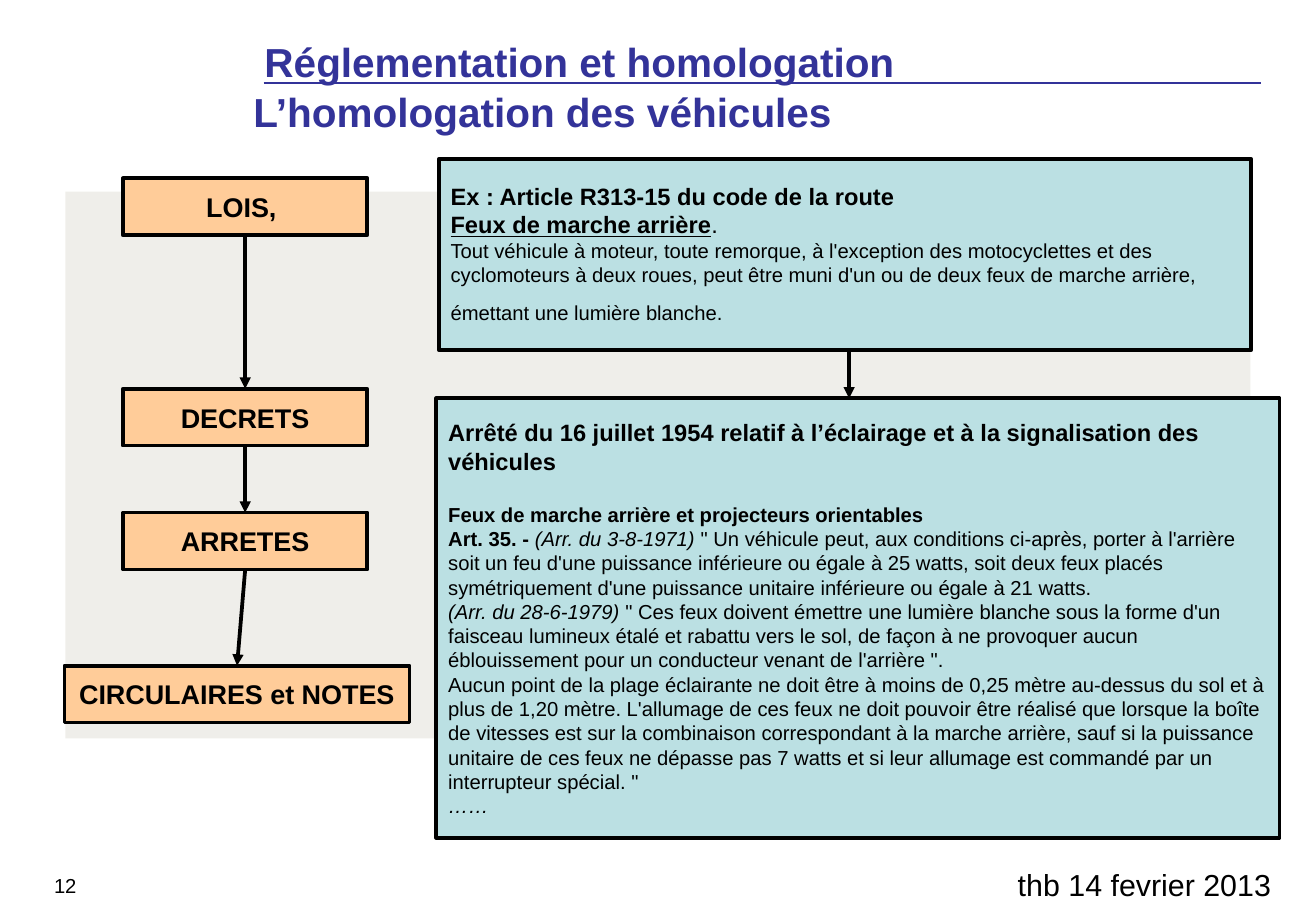
import pptx
import pptx.util
import pptx.dml.color
import pptx.enum.shapes
import pptx.enum.text
import pptx.oxml.ns
from lxml import etree

Cm, Pt = pptx.util.Cm, pptx.util.Pt
qn = pptx.oxml.ns.qn
color = pptx.dml.color.RGBColor.from_string
ALIGN = pptx.enum.text.PP_ALIGN
STRAIGHT = pptx.enum.shapes.MSO_CONNECTOR.STRAIGHT
RECTANGLE = pptx.enum.shapes.MSO_SHAPE.RECTANGLE

presentation = pptx.Presentation()
presentation.slide_width, presentation.slide_height = Cm(27.51), Cm(19.05)
slide = presentation.slides.add_slide(presentation.slide_layouts[6])


def add_line(x1, y1, x2, y2, line_color, width, arrow=False):
    line = slide.shapes.add_connector(STRAIGHT, Cm(x1), Cm(y1), Cm(x2), Cm(y2))
    line.line.color.rgb = color(line_color)
    line.line.width = Pt(width)
    if arrow:
        etree.SubElement(line.line._get_or_add_ln(), qn("a:tailEnd"), type="triangle")
    etree.SubElement(line._element.spPr, qn("a:effectLst"))


def add_box(left, top, width, height, fill, outline=True):
    box = slide.shapes.add_shape(RECTANGLE, Cm(left), Cm(top), Cm(width), Cm(height))
    box.shadow.inherit = False
    box.fill.solid()
    box.fill.fore_color.rgb = color(fill)
    if outline:
        box.line.color.rgb = color("000000")
        box.line.width = Pt(2.25)
    else:
        box.line.fill.background()
    box.text_frame.vertical_anchor = pptx.enum.text.MSO_ANCHOR.MIDDLE
    return box


# Background panel, half transparent
panel = add_box(1.37, 4.01, 24.77, 11.43, "E1DED7", outline=False)
panel_color = panel._element.spPr.find(qn("a:solidFill"))[0]
etree.SubElement(panel_color, qn("a:alpha"), val="50000")

# Titles with rule, footer and slide number
add_line(5.51, 1.73, 26.37, 1.73, "333399", 1)
labels = [
    ("Réglementation et homologation", 5.28, 0.64, 21.26, 1.27, 24, "333399", ALIGN.LEFT),
    ("L’homologation des véhicules", 5.05, 1.7, 16.69, 1.27, 24, "333399", ALIGN.LEFT),
    ("thb 14 fevrier 2013", 9.4, 17.98, 17.42, 0.46, 18, "000000", ALIGN.RIGHT),
    ("12", 0.15, 18.14, 1.7, 0.53, 12, "000000", ALIGN.RIGHT),
]
for text, left, top, width, height, size, text_color, alignment in labels:
    label = slide.shapes.add_textbox(Cm(left), Cm(top), Cm(width), Cm(height))
    label.text_frame.word_wrap = True
    paragraph = label.text_frame.paragraphs[0]
    paragraph.text = text
    paragraph.alignment = alignment
    paragraph.font.name = "Arial"
    paragraph.font.size = Pt(size)
    paragraph.font.bold = size == 24
    paragraph.font.color.rgb = color(text_color)

# Hierarchy of texts, each level pointing to the next
LEVEL_HEIGHT = 1.19
levels = [
    ("LOIS, ", 2.57, 3.73, 5.11),
    ("DECRETS", 2.57, 8.13, 5.11),
    ("ARRETES", 2.57, 10.72, 5.11),
    ("CIRCULAIRES et NOTES", 1.35, 13.92, 7.21),
]
for text, left, top, width in levels:
    box = add_box(left, top, width, LEVEL_HEIGHT, "FFCC99")
    box.text_frame.word_wrap = False
    paragraph = box.text_frame.paragraphs[0]
    paragraph.text = text
    paragraph.alignment = ALIGN.CENTER
    paragraph.font.name = "Arial"
    paragraph.font.size = Pt(16)
    paragraph.font.bold = True
    paragraph.font.color.rgb = color("000000")
for (_, left, top, width), (_, next_left, next_top, next_width) in zip(levels, levels[1:]):
    add_line(left + width / 2, top + LEVEL_HEIGHT, next_left + next_width / 2, next_top,
             "000000", 2.25, arrow=True)

# Example texts: paragraphs as (size, space before, runs), runs as (text, style)
# Styles: b bold, i italic, u underlined
code_article = [
    (14, 0, [("Ex : Article R313-15 du code de la route", "b")]),
    (14, 0, [("Feux de marche arrière", "bu"), (".", "")]),
    (12, 0, [("Tout véhicule à moteur, toute remorque, à l'exception des motocyclettes et des "
              "cyclomoteurs à deux roues, peut être muni d'un ou de deux feux de marche arrière, "
              "émettant une lumière blanche.", ""), (" ", "")]),
]
decree = [
    (14, 0, [("Arrêté du 16 juillet 1954 relatif à l’éclairage et à la signalisation des "
              "véhicules", "b")]),
    (12, 16, [("Feux de marche arrière et projecteurs orientables", "b")]),
    (12, 0, [("Art. 35. - ", "b"), ("(Arr. du 3-8-1971) ", "i"),
             ("\" Un véhicule peut, aux conditions ci-après, porter à l'arrière soit un feu d'une "
              "puissance inférieure ou égale à 25 watts, soit deux feux placés symétriquement "
              "d'une puissance unitaire inférieure ou égale à 21 watts.", "")]),
    (12, 0, [("(Arr. du 28-6-1979) ", "i"),
             ("\" Ces feux doivent émettre une lumière blanche sous la forme d'un faisceau "
              "lumineux étalé et rabattu vers le sol, de façon à ne provoquer aucun "
              "éblouissement pour un conducteur venant de l'arrière \".", "")]),
    (12, 0, [("Aucun point de la plage éclairante ne doit être à moins de 0,25 mètre au-dessus du "
              "sol et à plus de 1,20 mètre. L'allumage de ces feux ne doit pouvoir être réalisé "
              "que lorsque la boîte de vitesses est sur la combinaison correspondant à la marche "
              "arrière, sauf si la puissance unitaire de ces feux ne dépasse pas 7 watts et si "
              "leur allumage est commandé par un interrupteur spécial. \"", "")]),
    (12, 0, [("……", "i")]),
]
examples = [
    (9.17, 3.33, 16.99, 3.99, code_article),
    (9.12, 8.33, 17.63, 9.19, decree),
]
for left, top, width, height, content in examples:
    box = add_box(left, top, width, height, "BBE0E3")
    box.text_frame.word_wrap = True
    for index, (size, space_before, runs) in enumerate(content):
        paragraph = box.text_frame.paragraphs[0] if index == 0 else box.text_frame.add_paragraph()
        paragraph.alignment = ALIGN.LEFT
        if space_before:
            paragraph.space_before = Pt(space_before)
        paragraph.font.name = "Arial"
        paragraph.font.size = Pt(size)
        paragraph.font.color.rgb = color("000000")
        for text, style in runs:
            run = paragraph.add_run()
            run.text = text
            run.font.bold = "b" in style
            run.font.italic = "i" in style
            run.font.underline = "u" in style
            if text == " ":
                run.font.size = Pt(20)  # taller last line
add_line(17.75, 7.32, 17.75, 8.33, "000000", 2.25, arrow=True)

presentation.save("out.pptx")
